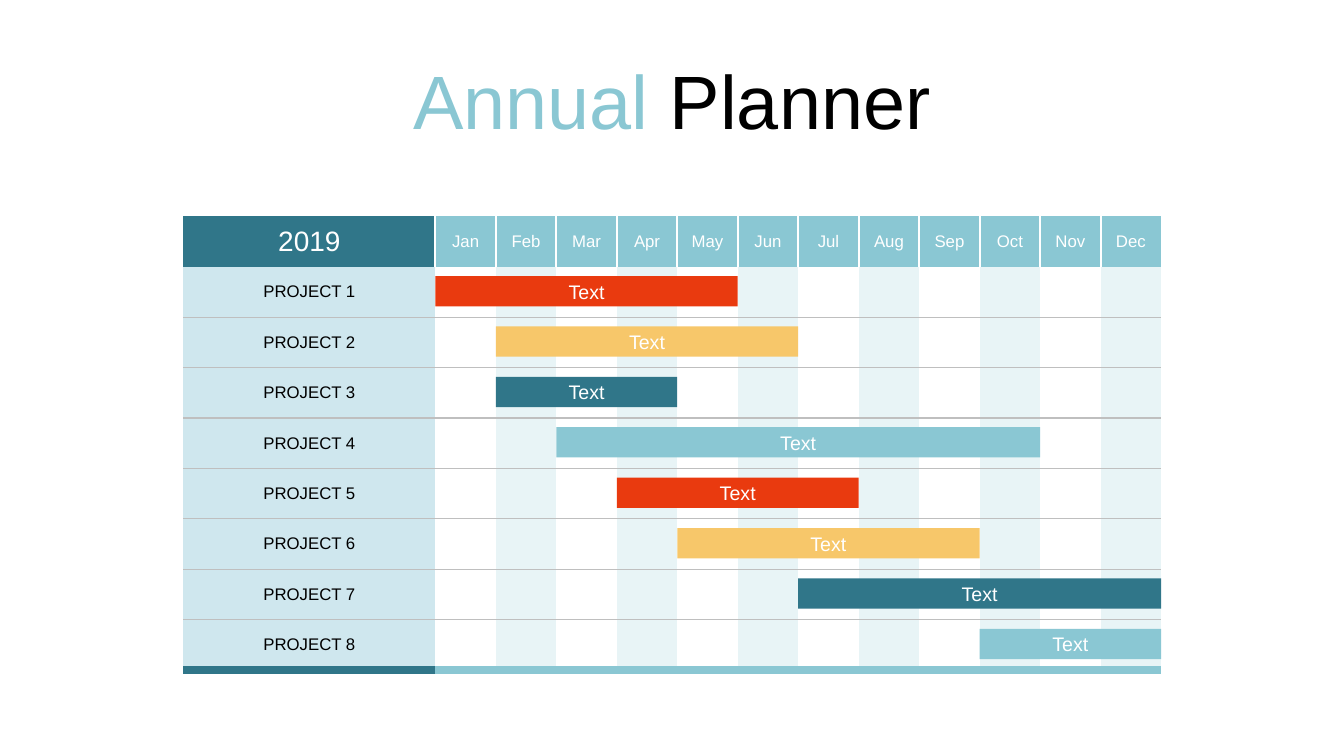
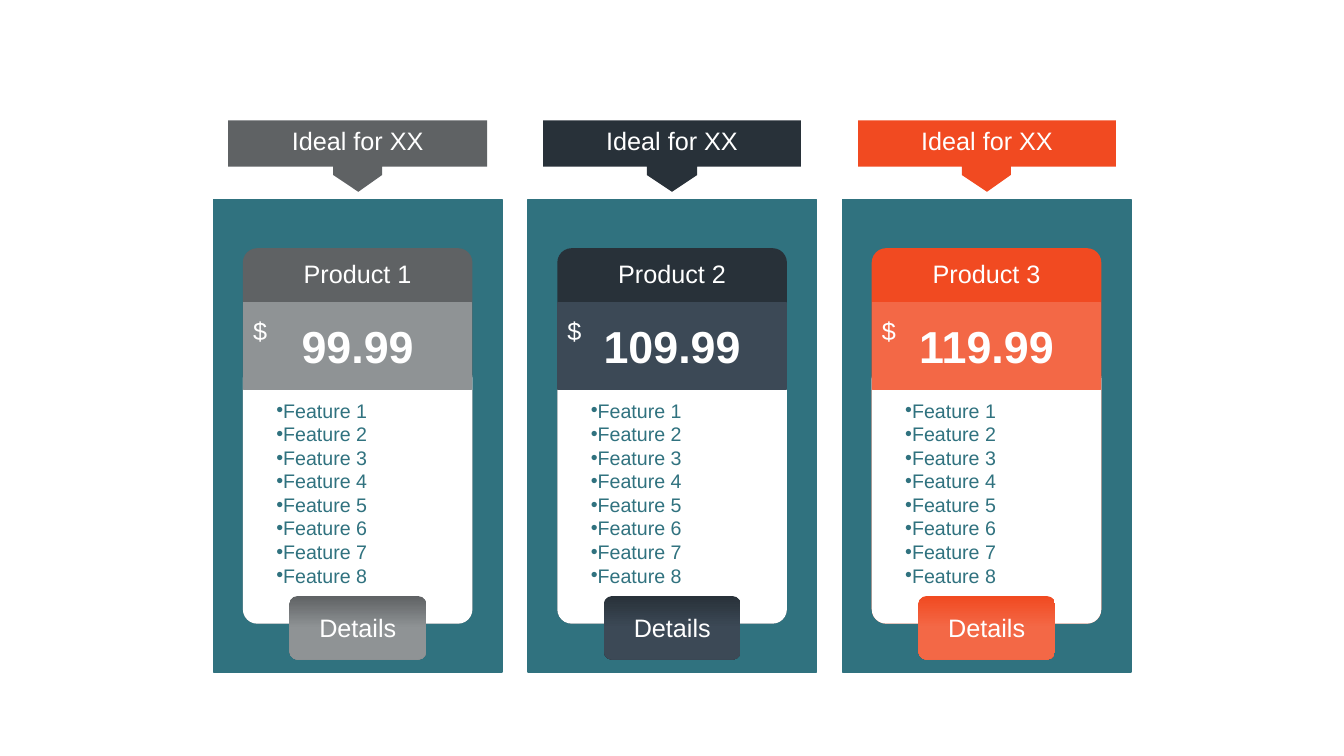
from dataclasses import dataclass
from typing import Any

from lxml import etree
from pptx import Presentation
from pptx import util as u
from pptx.dml import color as dml
from pptx.enum import shapes as kinds, text as txt
from pptx.oxml import ns

FONT = "Arial"
COLORS = {
    "white": "FFFFFF", "black": "000000", "rule": "BFBFBF",
    "teal": "307689", "sky": "8AC7D3", "label": "CFE7EE", "stripe": "E8F4F6",
    "red": "E93A0F", "yellow": "F7C76A", "panel": "30727F",
    "grey": "5F6264", "light_grey": "8F9395",
    "navy": "283139", "light_navy": "3C4956",
    "orange": "F14A21", "light_orange": "F36846",
}
MONTHS = ["Jan", "Feb", "Mar", "Apr", "May", "Jun",
          "Jul", "Aug", "Sep", "Oct", "Nov", "Dec"]
NO_STYLE = "{2D5ABB26-0587-4C30-8999-92F81FD0307C}"

TABLE_LEFT, TABLE_TOP = 131, 154.6
LABEL_WIDTH, MONTH_WIDTH, ROW_HEIGHT = 180, 43.2, 36
BAR_OFFSET, BAR_HEIGHT = 6.6, 21.6

CARD_LEFT, CARD_PITCH = 152.6, 224.6
BODY_OFFSET, BODY_WIDTH = 21.4, 163
FEATURE_COUNT = 8


@dataclass(frozen=True)
class Box:
    left: float
    top: float
    width: float
    height: float

    def lengths(self) -> list[u.Length]:
        return [u.Pt(n) for n in (self.left, self.top, self.width, self.height)]


@dataclass(frozen=True)
class Style:
    size: float
    color: str = "white"
    bold: bool = False


@dataclass(frozen=True)
class Project:
    first_month: int
    months: int
    color: str


@dataclass(frozen=True)
class Product:
    name: str
    price: str
    color: str


PROJECTS = [
    Project(0, 5, "red"), Project(1, 5, "yellow"),
    Project(1, 3, "teal"), Project(2, 8, "sky"),
    Project(3, 4, "red"), Project(4, 5, "yellow"),
    Project(6, 6, "teal"), Project(9, 3, "sky"),
]
PRODUCTS = [
    Product("Product 1", "99.99", "grey"),
    Product("Product 2", "109.99", "navy"),
    Product("Product 3", "119.99", "orange"),
]


def rgb(name: str) -> dml.RGBColor:
    return dml.RGBColor.from_string(COLORS[name])


def add_span(para: Any, words: str, style: Style) -> None:
    span = para.add_run()
    span.text = words
    span.font.name = FONT
    span.font.size = u.Pt(style.size)
    span.font.bold = style.bold
    span.font.color.rgb = rgb(style.color)


def write_centred(shape: Any, words: str, style: Style, top: bool = False) -> None:
    frame = shape.text_frame
    frame.word_wrap = True
    frame.vertical_anchor = txt.MSO_ANCHOR.TOP if top else txt.MSO_ANCHOR.MIDDLE
    para = frame.paragraphs[0]
    para.alignment = txt.PP_ALIGN.CENTER
    add_span(para, words, style)


def paint(shape: Any, color: str, outlined: bool = False) -> None:
    shape.shadow.inherit = False
    shape.fill.solid()
    shape.fill.fore_color.rgb = rgb(color)
    if outlined:
        shape.line.color.rgb = rgb(color)
        shape.line.width = u.Pt(1)
    else:
        shape.line.fill.background()


def add_rounded(shapes: Any, box: Box, color: str, radius: float,
                outlined: bool = True) -> Any:
    shape = shapes.add_shape(kinds.MSO_SHAPE.ROUNDED_RECTANGLE, *box.lengths())
    shape.adjustments[0] = radius
    paint(shape, color, outlined)
    return shape


def set_border(cell: Any, side: str, color: str, width: float) -> None:
    line = etree.SubElement(cell._tc.get_or_add_tcPr(), ns.qn(f"a:ln{side}"),
                            w=str(u.Pt(width)))
    fill = etree.SubElement(line, ns.qn("a:solidFill"))
    etree.SubElement(fill, ns.qn("a:srgbClr"), val=COLORS[color])


def format_cell(cell: Any, row: int, column: int) -> None:
    accent = "sky" if column else "teal"
    if row == 0:
        if column:
            set_border(cell, "L", "white", 1.5)
        if column < len(MONTHS):
            set_border(cell, "R", "white", 1.5)
        color = accent
    else:
        if row > 1:
            set_border(cell, "T", "rule", 1)
        if row < len(PROJECTS):
            set_border(cell, "B", "rule", 1)
        else:
            set_border(cell, "B", accent, 6)
        color = ("stripe" if column % 2 == 0 else "white") if column else "label"
    cell.fill.solid()
    cell.fill.fore_color.rgb = rgb(color)
    cell.margin_left = cell.margin_right = cell.margin_top = cell.margin_bottom = 0
    cell.vertical_anchor = txt.MSO_ANCHOR.MIDDLE


def write_cell(cell: Any, words: str, style: Style) -> None:
    para = cell.text_frame.paragraphs[0]
    para.alignment = txt.PP_ALIGN.CENTER
    add_span(para, words, style)


def add_calendar(page: Any) -> None:
    rows, columns = len(PROJECTS) + 1, len(MONTHS) + 1
    box = Box(TABLE_LEFT, TABLE_TOP, LABEL_WIDTH + MONTH_WIDTH * len(MONTHS),
              ROW_HEIGHT * rows)
    table = page.shapes.add_table(rows, columns, *box.lengths()).table
    table.first_row = table.horz_banding = False
    table._tbl.tblPr.find(ns.qn("a:tableStyleId")).text = NO_STYLE
    for index, column in enumerate(table.columns):
        column.width = u.Pt(MONTH_WIDTH if index else LABEL_WIDTH)
    for row in range(rows):
        table.rows[row].height = u.Pt(ROW_HEIGHT)
        for column in range(columns):
            format_cell(table.cell(row, column), row, column)
    write_cell(table.cell(0, 0), "2019", Style(20))
    for column, month in enumerate(MONTHS, 1):
        write_cell(table.cell(0, column), month, Style(12))
    for row in range(1, rows):
        write_cell(table.cell(row, 0), f"PROJECT {row}", Style(12, "black"))


def add_project_bar(page: Any, row: int, project: Project) -> None:
    box = Box(TABLE_LEFT + LABEL_WIDTH + MONTH_WIDTH * project.first_month,
              TABLE_TOP + ROW_HEIGHT * row + BAR_OFFSET,
              MONTH_WIDTH * project.months, BAR_HEIGHT)
    bar = page.shapes.add_shape(kinds.MSO_SHAPE.RECTANGLE, *box.lengths())
    paint(bar, project.color)
    write_centred(bar, "Text", Style(14))


def build_planner(page: Any) -> None:
    title = page.shapes.add_textbox(*Box(90, 34.6, 780, 72.7).lengths())
    write_centred(title, "Annual", Style(54, "sky"), top=True)
    add_span(title.text_frame.paragraphs[0], " Planner", Style(54, "black"))
    add_calendar(page)
    for row, project in enumerate(PROJECTS, 1):
        add_project_bar(page, row, project)


def write_features(shape: Any) -> None:
    frame = shape.text_frame
    frame.word_wrap = True
    frame.vertical_anchor = txt.MSO_ANCHOR.TOP
    frame.margin_top = u.Pt(21)
    for number in range(1, FEATURE_COUNT + 1):
        para = frame.paragraphs[0] if number == 1 else frame.add_paragraph()
        para.alignment = txt.PP_ALIGN.LEFT
        para.line_spacing = u.Pt(16.85)
        properties = para._p.get_or_add_pPr()
        properties.set("marL", "0")
        properties.set("indent", str(u.Pt(13.5)))
        etree.SubElement(properties, ns.qn("a:buFont"), typeface=FONT)
        etree.SubElement(properties, ns.qn("a:buChar"), char="•")
        add_span(para, f"Feature {number}", Style(14, "panel"))


def add_card(page: Any, left: float, product: Product) -> None:
    shapes = page.shapes.add_group_shape().shapes
    body_left = left + BODY_OFFSET
    light = f"light_{product.color}"

    add_rounded(shapes, Box(left, 142.4, 206, 337.6), "panel", 0)

    header = add_rounded(shapes, Box(body_left, 177.8, BODY_WIDTH, 267.2),
                         product.color, 0.06)
    write_centred(header, product.name, Style(18), top=True)

    features = add_rounded(shapes, Box(body_left, 260.7, BODY_WIDTH, 184.3),
                           "white", 0.06)
    write_features(features)

    price = add_rounded(shapes, Box(body_left, 216.2, BODY_WIDTH, 61.9), light, 0)
    write_centred(price, product.price, Style(32, bold=True))

    button = add_rounded(shapes, Box(left + 54.2, 425.7, 97.6, 45.5),
                         product.color, 0.13, outlined=False)
    button.fill.gradient()
    button.fill.gradient_angle = 270
    for stop, color, position in zip(button.fill.gradient_stops,
                                     (product.color, light), (0, 0.5)):
        stop.color.rgb = rgb(color)
        stop.position = position
    write_centred(button, "Details", Style(18))

    currency = shapes.add_textbox(*Box(body_left - 0.3, 221.8, 23.8, 29).lengths())
    currency.text_frame.word_wrap = False
    add_span(currency.text_frame.paragraphs[0], "$", Style(18))


def add_ribbon(page: Any, left: float, color: str) -> None:
    right, middle = left + 184.4, left + 92.2
    top, base, shoulder, tip = 86.4, 119.2, 124.6, 137.2
    notch = 17.7
    builder = page.shapes.build_freeform(left, top, scale=u.Pt(1))
    builder.add_line_segments([
        (right, top), (right, base),
        (middle + notch, base), (middle + notch, shoulder), (middle, tip),
        (middle - notch, shoulder), (middle - notch, base), (left, base),
    ])
    ribbon = builder.convert_to_shape()
    paint(ribbon, color)
    write_centred(ribbon, "Ideal for XX", Style(18), top=True)


def build_pricing(page: Any) -> None:
    for index, product in enumerate(PRODUCTS):
        left = CARD_LEFT + CARD_PITCH * index
        add_card(page, left, product)
        add_ribbon(page, left + 10.8, product.color)


def main() -> None:
    deck = Presentation()
    deck.slide_width, deck.slide_height = u.Pt(960), u.Pt(540)
    for build in (build_planner, build_pricing):
        build(deck.slides.add_slide(deck.slide_layouts[6]))
    deck.save("out.pptx")


if __name__ == "__main__":
    main()
